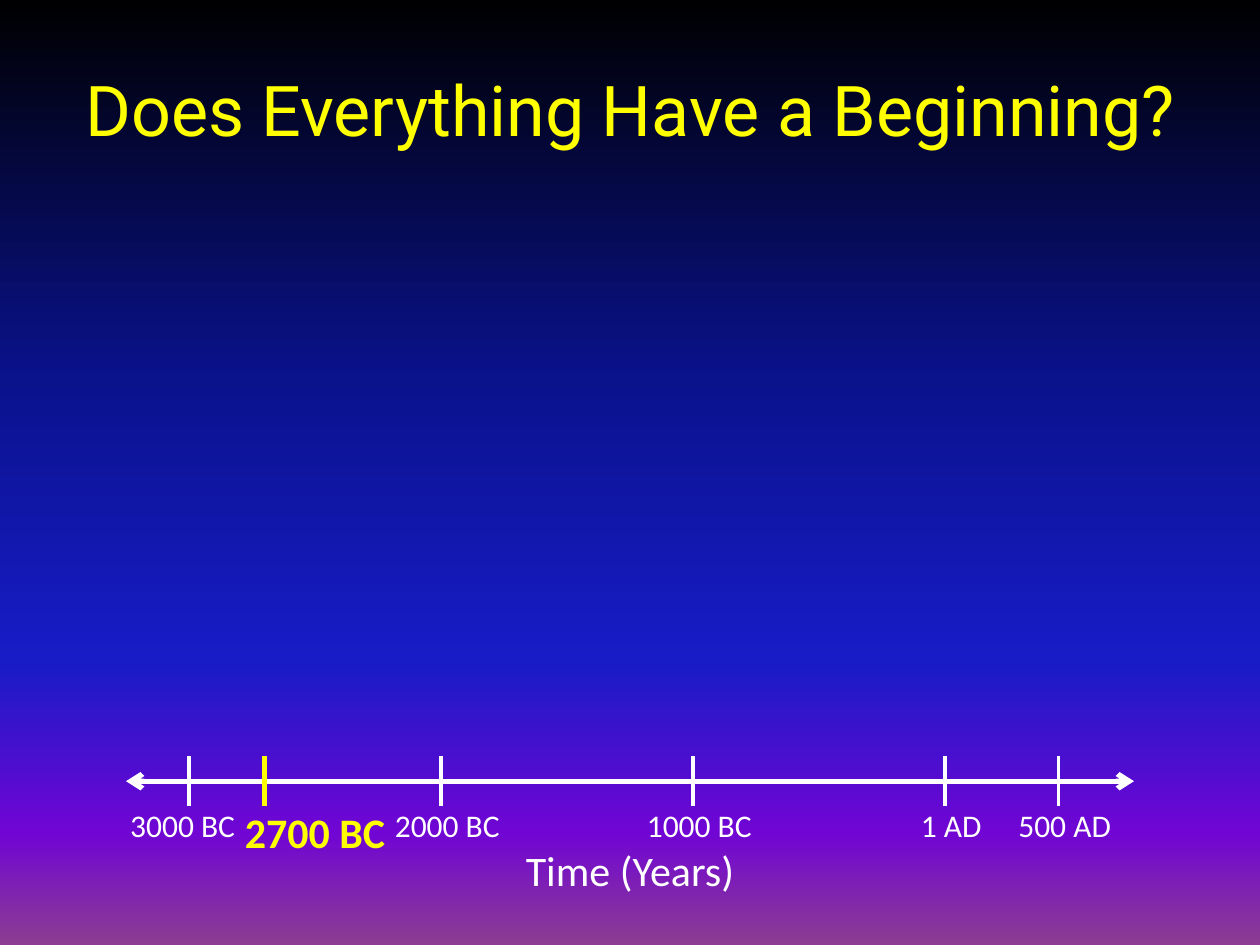
from pptx import Presentation
from pptx.dml.color import RGBColor
from pptx.enum.shapes import MSO_CONNECTOR
from pptx.enum.text import MSO_ANCHOR, MSO_AUTO_SIZE, PP_ALIGN
from pptx.oxml.ns import qn
from pptx.util import Inches, Pt
from lxml import etree

STRAIGHT = MSO_CONNECTOR.STRAIGHT
CENTER = PP_ALIGN.CENTER
TOP, MIDDLE = MSO_ANCHOR.TOP, MSO_ANCHOR.MIDDLE
GROW, FIXED = MSO_AUTO_SIZE.SHAPE_TO_FIT_TEXT, MSO_AUTO_SIZE.NONE

COLORS = {"white": "FFFFFF", "yellow": "FFFF00"}
SKY = {0: "000000", 40: "0A128C", 70: "181CC7", 88: "7005D4", 100: "8C3D91"}

AXIS_Y = 6.2
TICK_HALF = 0.2
LABEL_Y = AXIS_Y + TICK_HALF
DATES = [
    ("3000 BC", 1.5, 1.0),
    ("2000 BC", 3.5, 3.1),
    ("1000 BC", 5.5, 5.1),
    ("1 AD", 7.5, 7.1),
    ("500 AD", 8.4, 8.0),
]


def rgb(name):
    return RGBColor.from_string(COLORS[name])


def set_background(slide):
    fill = slide.background.fill
    fill.gradient()
    fill.gradient_angle = 270
    stops = slide.element.find(".//" + qn("a:gsLst"))
    for stop in list(stops):
        stops.remove(stop)
    for percent, color in SKY.items():
        stop = etree.SubElement(stops, qn("a:gs"), pos=str(percent * 1000))
        etree.SubElement(stop, qn("a:srgbClr"), val=color)


def write_text(sp, text, size, color="white", font="Calibri", bold=False,
               anchor=TOP, auto_size=GROW, spacing=None):
    tf = sp.text_frame
    tf.margin_left = tf.margin_right = tf.margin_top = tf.margin_bottom = 0
    tf.word_wrap = True
    tf.auto_size = auto_size
    tf.vertical_anchor = anchor
    p = tf.paragraphs[0]
    p.alignment = CENTER
    p.line_spacing = spacing
    r = p.add_run()
    r.text = text
    r.font.name = font
    r.font.size = Pt(size)
    r.font.bold = bold
    r.font.color.rgb = rgb(color)


def add_title(slide, text):
    sp = slide.shapes.title
    sp.left, sp.top = Inches(0.4), Inches(0.5)
    sp.width, sp.height = Inches(9.2), Inches(0.8)
    write_text(sp, text, 40, color="yellow", font="Roboto",
               anchor=MIDDLE, auto_size=FIXED, spacing=0.9)


def add_label(slide, text, x, y, w, h, size=18, **style):
    sp = slide.shapes.add_textbox(Inches(x), Inches(y), Inches(w), Inches(h))
    write_text(sp, text, size, **style)


def add_line(slide, x1, y1, x2, y2, width=2, color="white", arrows=False):
    sp = slide.shapes.add_connector(
        STRAIGHT, Inches(x1), Inches(y1), Inches(x2), Inches(y2))
    sp.line.width = Pt(width)
    sp.line.color.rgb = rgb(color)
    if arrows:
        ln = sp.line._get_or_add_ln()
        for end in ("a:headEnd", "a:tailEnd"):
            etree.SubElement(ln, qn(end), type="arrow")
    etree.SubElement(sp._element.spPr, qn("a:effectLst"))


def add_tick(slide, x, **style):
    add_line(slide, x, AXIS_Y - TICK_HALF, x, AXIS_Y + TICK_HALF, **style)


def main():
    prs = Presentation()
    prs.slide_width, prs.slide_height = Inches(10), Inches(7.5)
    slide = prs.slides.add_slide(prs.slide_layouts[5])
    set_background(slide)
    add_title(slide, "Does Everything Have a Beginning?")
    add_line(slide, 1, AXIS_Y, 9, AXIS_Y, width=3, arrows=True)
    for text, tick_x, label_x in DATES:
        add_tick(slide, tick_x)
        add_label(slide, text, label_x, LABEL_Y, 0.9, 0.3)
    add_label(slide, "Time (Years)", 4.1, 6.7, 1.8, 0.5, size=24)
    add_tick(slide, 2.1, width=3, color="yellow")
    add_label(slide, "2700 BC", 1.85, LABEL_Y, 1.3, 0.4, size=24,
              color="yellow", bold=True)
    prs.save("out.pptx")


if __name__ == "__main__":
    main()
